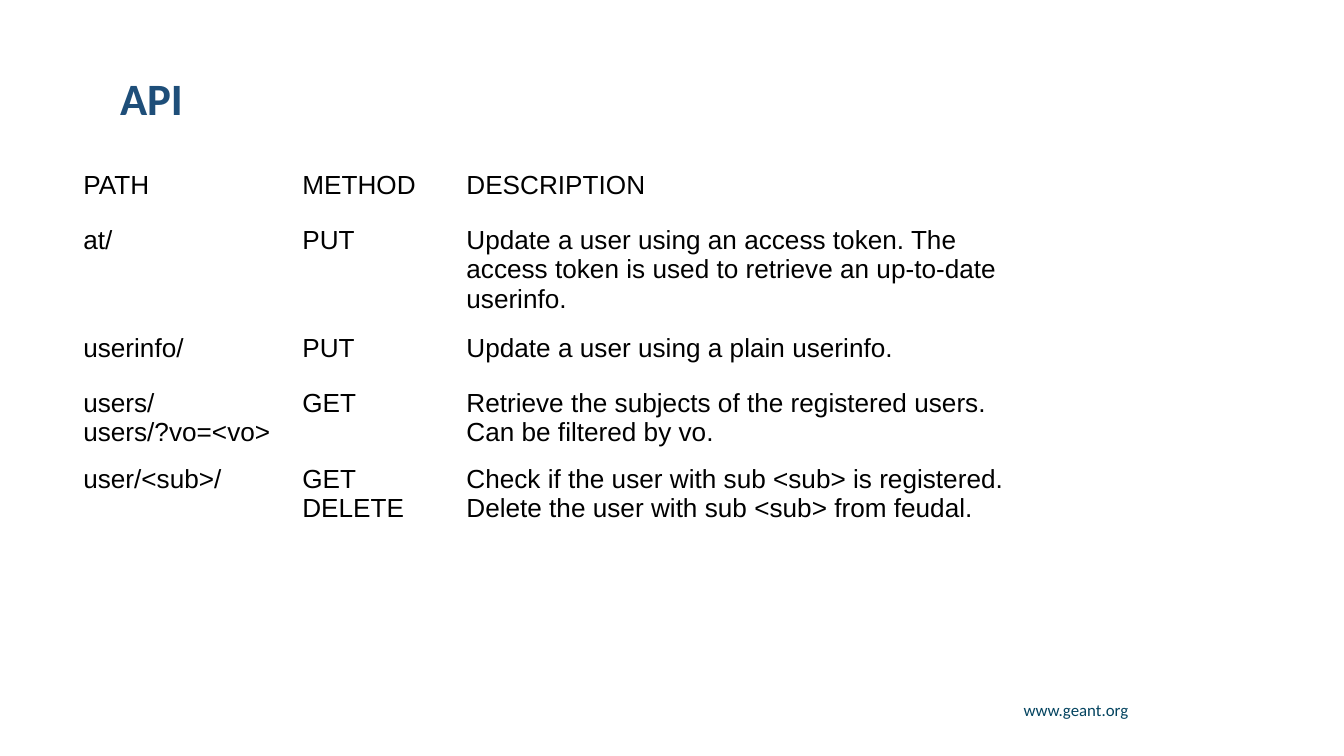
"""Build the API slide with its table of endpoints."""
from dataclasses import dataclass

import lxml.etree
import pptx
import pptx.dml.color
import pptx.enum.text
import pptx.oxml.ns
import pptx.slide
import pptx.table
import pptx.text.text
import pptx.util

Cm = pptx.util.Cm
Pt = pptx.util.Pt
RGBColor = pptx.dml.color.RGBColor
Align = pptx.enum.text.PP_ALIGN
Anchor = pptx.enum.text.MSO_ANCHOR

BLACK = RGBColor(0x00, 0x00, 0x00)
WHITE = RGBColor(0xFF, 0xFF, 0xFF)
TITLE_BLUE = RGBColor(0x1E, 0x4E, 0x79)
FOOTER_BLUE = RGBColor(0x03, 0x43, 0x5F)

COLUMN_WIDTHS = (4.14, 3.1, 10.7)
ROW_HEIGHT = 1.04


@dataclass(frozen=True)
class TextStyle:
    font: str
    size: float
    color: RGBColor
    bold: bool = False


@dataclass(frozen=True)
class Label:
    text: str
    left: float
    top: float
    width: float
    height: float
    style: TextStyle
    alignment: Align
    anchor: Anchor


@dataclass(frozen=True)
class Endpoint:
    address: tuple[str, ...]
    method: tuple[str, ...]
    description: tuple[str, ...]


CELL_STYLE = TextStyle("Arial", 14, BLACK)

LABELS = (
    Label("www.geant.org", 18.31, 13.16, 3.2, 0.71,
          TextStyle("Calibri", 9, FOOTER_BLUE), Align.RIGHT, Anchor.TOP),
    Label("API", 2.08, 1.47, 20.62, 0.89,
          TextStyle("Calibri", 24, TITLE_BLUE, True), Align.LEFT, Anchor.MIDDLE),
)

ROWS = (
    Endpoint(("PATH",), ("METHOD",), ("DESCRIPTION",)),
    Endpoint(("at/",), ("PUT",),
             ("Update a user using an access token. The access token is used "
              "to retrieve an up-to-date userinfo.",)),
    Endpoint(("userinfo/",), ("PUT",), ("Update a user using a plain userinfo.",)),
    Endpoint(("users/", "users/?vo=<vo>"), ("GET",),
             ("Retrieve the subjects of the registered users. Can be filtered by vo.",)),
    Endpoint(("user/<sub>/",), ("GET", "DELETE"),
             ("Check if the user with sub <sub> is registered.",
              "Delete the user with sub <sub> from feudal.")),
)


def add_run(paragraph: pptx.text.text._Paragraph, text: str, style: TextStyle) -> None:
    run = paragraph.add_run()
    run.text = text
    run.font.name = style.font
    run.font.size = Pt(style.size)
    run.font.bold = style.bold
    run.font.color.rgb = style.color


def add_label(slide: pptx.slide.Slide, label: Label) -> None:
    shape = slide.shapes.add_textbox(
        Cm(label.left), Cm(label.top), Cm(label.width), Cm(label.height))
    frame = shape.text_frame
    frame.word_wrap = True
    frame.vertical_anchor = label.anchor
    frame.margin_left = frame.margin_right = Cm(0.19)
    frame.margin_top = frame.margin_bottom = Cm(0.1)
    paragraph = frame.paragraphs[0]
    paragraph.alignment = label.alignment
    paragraph.line_spacing = 0.9
    add_run(paragraph, label.text, label.style)


def set_border(cell: pptx.table._Cell, side: str, width: float) -> None:
    qn = pptx.oxml.ns.qn
    properties = cell._tc.get_or_add_tcPr()
    line = lxml.etree.SubElement(properties, qn(f"a:ln{side}"), w=str(Pt(width)))
    fill = lxml.etree.SubElement(line, qn("a:solidFill"))
    lxml.etree.SubElement(fill, qn("a:srgbClr"), val=str(WHITE))


def fill_cell(cell: pptx.table._Cell, lines: tuple[str, ...],
              top_border: float, bottom_border: float) -> None:
    for index, text in enumerate(lines):
        frame = cell.text_frame
        paragraph = frame.add_paragraph() if index else frame.paragraphs[0]
        add_run(paragraph, text, CELL_STYLE)
    for side, width in (("L", 1), ("R", 1), ("T", top_border), ("B", bottom_border)):
        set_border(cell, side, width)
    cell.fill.background()


def add_endpoint_table(slide: pptx.slide.Slide) -> None:
    frame = slide.shapes.add_table(
        len(ROWS), len(COLUMN_WIDTHS), Cm(1.32), Cm(3.1),
        Cm(sum(COLUMN_WIDTHS)), Cm(ROW_HEIGHT * len(ROWS)))
    table = frame.table
    table.first_row = True
    table.horz_banding = False
    for column, width in zip(table.columns, COLUMN_WIDTHS):
        column.width = Cm(width)
    for row_index, endpoint in enumerate(ROWS):
        table.rows[row_index].height = Cm(ROW_HEIGHT)
        top_border = 3 if row_index == 1 else 1
        bottom_border = 3 if row_index == 0 else 1
        columns = (endpoint.address, endpoint.method, endpoint.description)
        for column_index, lines in enumerate(columns):
            fill_cell(table.cell(row_index, column_index), lines,
                      top_border, bottom_border)


def main() -> None:
    presentation = pptx.Presentation()
    presentation.slide_width = Cm(25.4)
    presentation.slide_height = Cm(14.29)
    slide = presentation.slides.add_slide(presentation.slide_layouts[6])
    for label in LABELS:
        add_label(slide, label)
    add_endpoint_table(slide)
    presentation.save("out.pptx")


if __name__ == "__main__":
    main()
